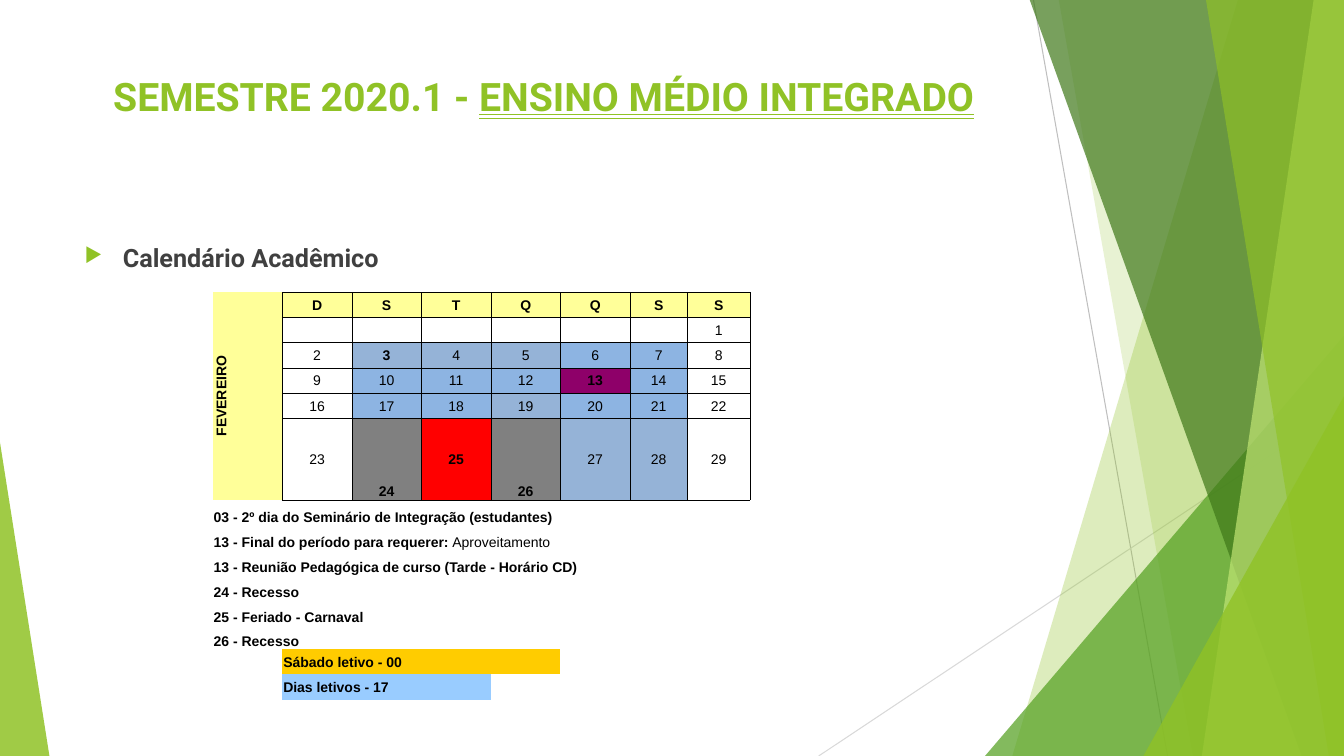
from lxml.etree import SubElement
from pptx import Presentation
from pptx.dml.color import RGBColor
from pptx.enum.shapes import MSO_CONNECTOR, MSO_SHAPE
from pptx.enum.text import MSO_ANCHOR, MSO_UNDERLINE, PP_ALIGN
from pptx.oxml import parse_xml
from pptx.oxml.ns import nsdecls, qn
from pptx.util import Inches, Pt

# Content
COLOURS = {
    "green": "90C226", "leaf": "54A021", "forest": "3F7819", "lime": "C0E474",
    "grey_line": "BFBFBF", "pale_line": "D9D9D9", "text": "404040", "black": "000000",
    "cream": "FFFF99", "steel": "95B3D7", "sky": "8DB4E2", "purple": "8E0069",
    "grey": "808080", "red": "FF0000", "amber": "FFCC00", "pale_blue": "99CCFF",
}
TITLE = [("SEMESTRE 2020.1 - ", {}),
         ("ENSINO MÉDIO INTEGRADO", {"underline": MSO_UNDERLINE.DOUBLE_LINE}),
         (" ", {"bold": False})]
HEADING = "Calendário Acadêmico"
MONTH = "FEVEREIRO"
WEEKDAYS = "DSTQQSS"
LAST_DAY = 29
DAY_FILLS = {
    "steel": [3, 4, 5, 19, 27, 28],
    "sky": [6, 7, 10, 11, 12, 14, 17, 18, 20, 21],
    "purple": [13], "grey": [24, 26], "red": [25],
}
BOLD_DAYS = {3, 13, 24, 25, 26}
LOW_DAYS = {24, 26}
# Events: columns spanned, bold text, plain text
EVENTS = [
    (10, "03 - 2º dia do Seminário de Integração (estudantes)", ""),
    (10, "13 - Final do período para requerer: ", "Aproveitamento"),
    (11, "13 - Reunião Pedagógica de curso (Tarde - Horário CD)", ""),
    (3, "24 - Recesso", ""),
    (5, "25 - Feriado - Carnaval", ""),
    (3, "26 - Recesso", ""),
]
# Totals: columns spanned, text, fill
TOTALS = [(4, "Sábado letivo - 00", "amber"), (3, "Dias letivos - 17", "pale_blue")]
COLUMN_WIDTHS = [0.69] * 6 + [0.57, 0.62, 0.4, 0.57, 0.4]
WEEK_ROWS = 6
ROW_HEIGHTS = [0.25] * 5 + [0.81] + [0.25] * 5 + [0.23] + [0.25] * 2

# Backdrop, from back to front
WIDTH, HEIGHT, TOP = 13.33, 7.5, -0.01
RAYS = [((10.25, 0), (11.58, 7.5), "grey_line"), ((13.33, 4.03), (8.12, 7.5), "pale_line")]
# Bands reach the right edge: left x at the top, left x at the bottom, colour, opacity
# Triangles: left, top, width, height, apex position, colour, opacity
BACKDROP = [
    ("band", (12.28, 10.04), "green", 30),
    ("band", (10.5, 11.83), "green", 20),
    ("triangle", (9.77, 3.33, 3.56, 4.17, 1), "leaf", 72),
    ("band", (10.21, 12.91), "forest", 70),
    ("band", (13.03, 11.92), "lime", 70),
    ("band", (11.96, 13.18), "green", 65),
    ("triangle", (11.34, 3.93, 1.99, 3.57, 1), "green", 80),
    ("triangle", (0, 4.39, 0.49, 3.11, 0), "green", 85),
]


def colour(name):
    return RGBColor.from_string(COLOURS[name])


def add_span(para, text, size=10, font="Arial", ink="black", bold=True, underline=None):
    span = para.add_run()
    span.text = text
    span.font.size = Pt(size)
    span.font.name = font
    span.font.bold = bold
    span.font.underline = underline
    span.font.color.rgb = colour(ink)


def add_ray(page, start, end, ink):
    ray = page.shapes.add_connector(MSO_CONNECTOR.STRAIGHT, *map(Inches, start + end))
    ray.line.color.rgb = colour(ink)
    ray.line.width = Pt(0.75)
    SubElement(ray._element.spPr, qn("a:effectLst"))


def add_facet(page, kind, place, ink, opacity):
    if kind == "band":
        top_x, bottom_x = place
        corners = [(WIDTH, TOP), (WIDTH, HEIGHT), (bottom_x, HEIGHT)]
        builder = page.shapes.build_freeform(Inches(top_x), Inches(TOP))
        builder.add_line_segments([(Inches(x), Inches(y)) for x, y in corners], close=True)
        facet = builder.convert_to_shape()
    else:
        *bounds, apex = place
        facet = page.shapes.add_shape(MSO_SHAPE.ISOSCELES_TRIANGLE, *map(Inches, bounds))
        facet.adjustments[0] = apex
    facet.shadow.inherit = False
    facet.line.fill.background()
    facet.fill.solid()
    facet.fill.fore_color.rgb = colour(ink)
    tint = facet._element.spPr.find(qn("a:solidFill"))[0]
    SubElement(tint, qn("a:alpha"), val=str(opacity * 1000))


def add_text_box(page, *bounds):
    box = page.shapes.add_textbox(*map(Inches, bounds))
    box.text_frame.word_wrap = True
    return box.text_frame.paragraphs[0]


def fill_cell(cell, spans, align=PP_ALIGN.CENTER, anchor=MSO_ANCHOR.MIDDLE, fill=None):
    cell.vertical_anchor = anchor
    para = cell.text_frame.paragraphs[0]
    para.alignment = align
    for text, bold in spans:
        add_span(para, text, bold=bold)
    if fill:
        cell.fill.solid()
        cell.fill.fore_color.rgb = colour(fill)


def add_borders(cell, sides):
    properties = cell._tc.get_or_add_tcPr()
    for place, side in enumerate(sides):
        properties.insert(place, parse_xml(
            f'<a:ln{side} {nsdecls("a")} w="6350"><a:solidFill>'
            f'<a:srgbClr val="{COLOURS["black"]}"/></a:solidFill></a:ln{side}>'))


def add_calendar(page):
    frame = page.shapes.add_table(
        len(ROW_HEIGHTS), len(COLUMN_WIDTHS), Inches(2.11), Inches(2.9),
        Inches(sum(COLUMN_WIDTHS)), Inches(sum(ROW_HEIGHTS)))
    table = frame.table
    table.first_row = table.horz_banding = False
    # Plain style without grid
    style = table._tbl.tblPr.find(qn("a:tableStyleId"))
    style.text = "{2D5ABB26-0587-4C30-8999-92F81FD0307C}"
    for column, width in zip(table.columns, COLUMN_WIDTHS):
        column.width = Inches(width)
    for row, height in zip(table.rows, ROW_HEIGHTS):
        row.height = Inches(height)
    for cell in table.iter_cells():
        cell.margin_left = cell.margin_top = cell.margin_right = Inches(0.01)
        cell.margin_bottom = 0
        cell.fill.background()
        SubElement(cell.text_frame.paragraphs[0]._p, qn("a:endParaRPr"), sz="1000")

    # Month
    month = table.cell(0, 0)
    month.merge(table.cell(WEEK_ROWS - 1, 0))
    fill_cell(month, [(MONTH, True)], fill="cream")
    month._tc.get_or_add_tcPr().set("vert", "vert270")
    add_borders(month, "R")

    # Weekdays and days; the month starts on the last weekday
    fills = {day: name for name, days in DAY_FILLS.items() for day in days}
    for column, weekday in enumerate(WEEKDAYS, 1):
        fill_cell(table.cell(0, column), [(weekday, True)], fill="cream")
        add_borders(table.cell(0, column), "LRTB")
        for week in range(1, WEEK_ROWS):
            cell = table.cell(week, column)
            day = 7 * (week - 1) + column - 6
            if 1 <= day <= LAST_DAY:
                anchor = MSO_ANCHOR.BOTTOM if day in LOW_DAYS else MSO_ANCHOR.MIDDLE
                fill_cell(cell, [(str(day), day in BOLD_DAYS)], anchor=anchor,
                          fill=fills.get(day))
            add_borders(cell, "LRT" if week == WEEK_ROWS - 1 else "LRTB")

    # Events and totals
    for row, (width, strong, plain) in enumerate(EVENTS, WEEK_ROWS):
        cell = table.cell(row, 0)
        cell.merge(table.cell(row, width - 1))
        spans = [(strong, True)] + ([(plain, False)] if plain else [])
        fill_cell(cell, spans, align=PP_ALIGN.LEFT, anchor=MSO_ANCHOR.BOTTOM)
    for row, (width, text, fill) in enumerate(TOTALS, WEEK_ROWS + len(EVENTS)):
        cell = table.cell(row, 1)
        cell.merge(table.cell(row, width))
        fill_cell(cell, [(text, True)], align=PP_ALIGN.LEFT, fill=fill)


def main():
    deck = Presentation()
    deck.slide_width, deck.slide_height = Inches(WIDTH), Inches(HEIGHT)
    page = deck.slides.add_slide(deck.slide_layouts[6])
    for ray in RAYS:
        add_ray(page, *ray)
    for facet in BACKDROP:
        add_facet(page, *facet)

    # Title
    para = add_text_box(page, 0.74, 0.67, 9.4, 0.67)
    para.alignment = PP_ALIGN.CENTER
    for text, look in TITLE:
        add_span(para, text, size=28, font="Roboto", ink="green", **look)

    # Bulleted heading
    para = add_text_box(page, 0.74, 2.36, 9.4, 4.24)
    para.space_before = Pt(10)
    add_span(para, HEADING, size=18, font="Roboto", ink="text")
    properties = para._p.get_or_add_pPr()
    properties.set("marL", str(Inches(0.38)))
    properties.set("indent", str(Inches(-0.38)))
    tint = SubElement(properties, qn("a:buClr"))
    SubElement(tint, qn("a:srgbClr"), val=COLOURS["green"])
    SubElement(properties, qn("a:buSzPct"), val="80000")
    SubElement(properties, qn("a:buChar"), char="▶")

    add_calendar(page)
    deck.save("out.pptx")


if __name__ == "__main__":
    main()
